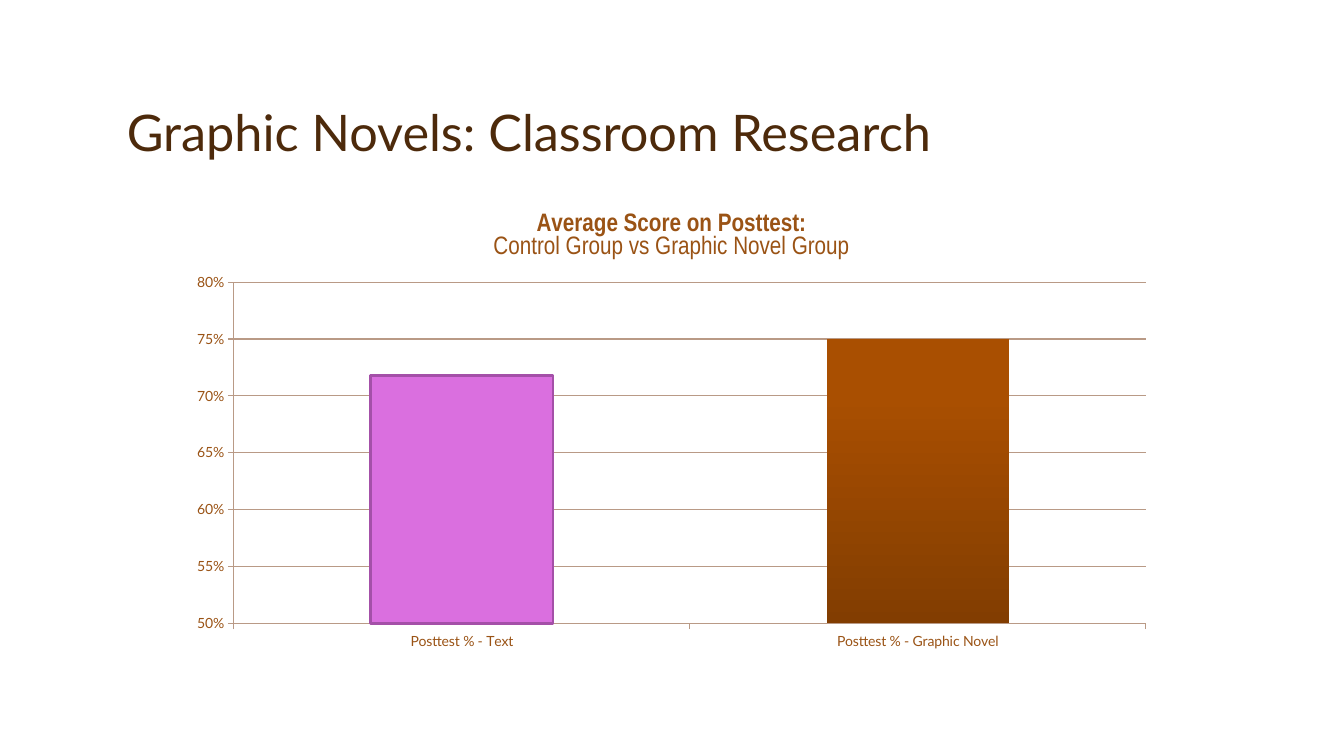
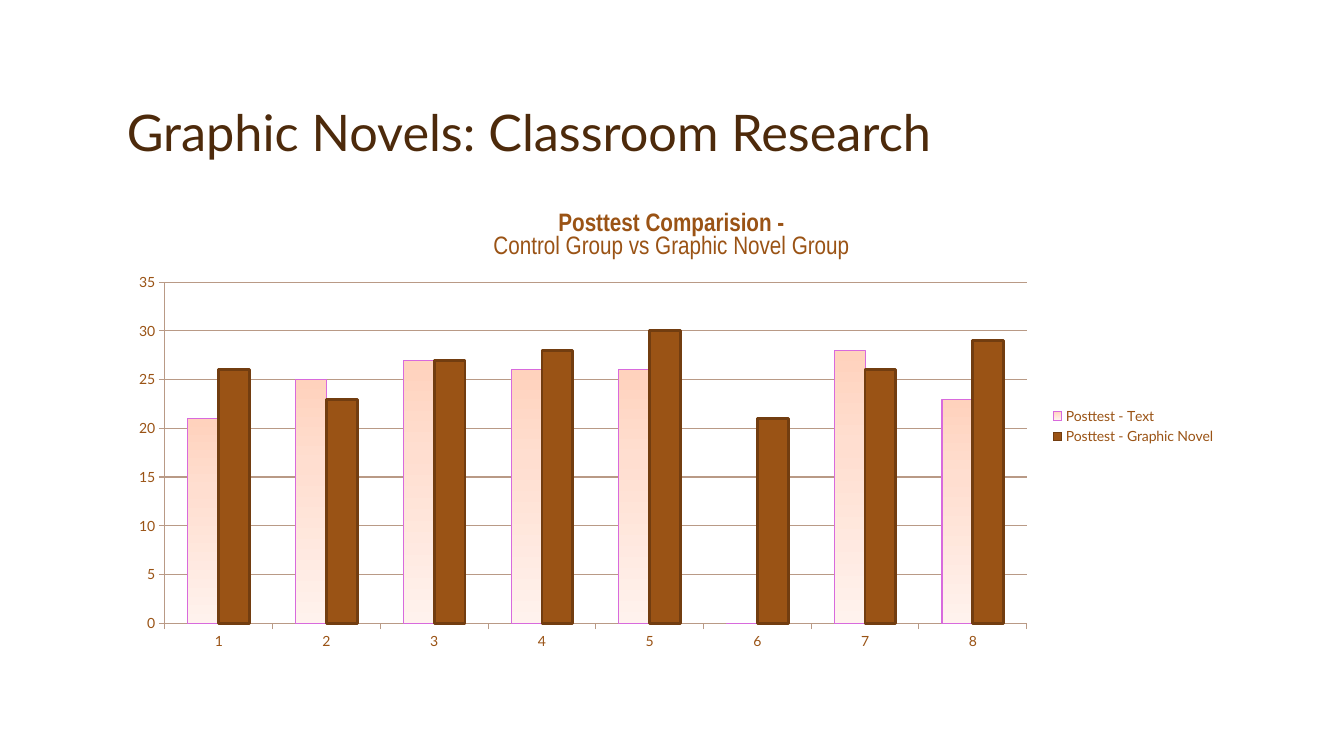
from pptx import Presentation
from pptx.chart.data import CategoryChartData
from pptx.dml.color import RGBColor
from pptx.enum.chart import XL_CHART_TYPE, XL_LEGEND_POSITION, XL_TICK_MARK
from pptx.enum.text import MSO_ANCHOR
from pptx.oxml import parse_xml
from pptx.oxml.ns import nsdecls
from pptx.util import Inches, Pt

COLUMN = XL_CHART_TYPE.COLUMN_CLUSTERED
LEGEND_RIGHT = XL_LEGEND_POSITION.RIGHT
TICK_OUT = XL_TICK_MARK.OUTSIDE
BOTTOM = MSO_ANCHOR.BOTTOM


class Theme:
    """Fonts, type sizes and colours."""
    body_font, chart_title_font = "Lato", "Arial Narrow"
    title_size, chart_title_size, chart_size = 36, 18, 10
    title, chart_text, grid = "4D2A0B", "9A5315", "B99A86"
    orchid, orchid_edge, pink_edge = "DA6FDF", "A450A8", "D86ADD"
    brown, brown_edge = "9A5315", "723D10"
    # Gradients: stops as (percent, colour), then counter-clockwise angle
    rust_gradient = [(0, "823D01"), (80, "A94F01"), (100, "AA4F00")], 90
    peach_gradient = [(0, "FFD2BD"), (35, "FFDED0"), (100, "FFF2ED")], 270


class Deck:
    def __init__(self, theme):
        self.theme = theme
        self.prs = Presentation()
        self.prs.slide_width, self.prs.slide_height = Inches(13.33), Inches(7.5)
        self.s = None

    def slide(self, title):
        self.s = self.prs.slides.add_slide(self.prs.slide_layouts[6])
        tf = self.s.shapes.add_textbox(
            Inches(1.16), Inches(0.33), Inches(11), Inches(1.33)).text_frame
        tf.word_wrap = True
        tf.vertical_anchor = BOTTOM
        p = tf.paragraphs[0]
        p.text = title
        p.line_spacing = 0.9
        self.font(p.runs[0].font, self.theme.title_size, self.theme.title)

    def font(self, font, size, color, name=None, bold=False):
        font.name = name or self.theme.body_font
        font.size = Pt(size)
        font.bold = bold
        font.color.rgb = RGBColor.from_string(color)

    def line(self, line, color, width=0.75):
        line.color.rgb = RGBColor.from_string(color)
        line.width = Pt(width)

    def paint(self, fmt, fill, edge=None):
        """Fill with a colour or a gradient; edge is (colour, width)."""
        if isinstance(fill, str):
            fmt.fill.solid()
            fmt.fill.fore_color.rgb = RGBColor.from_string(fill)
        else:
            stops, angle = fill
            fmt.fill.gradient()
            fmt.fill.gradient_angle = angle
            gs = "".join(
                f'<a:gs pos="{pos * 1000}"><a:srgbClr val="{color}"/></a:gs>'
                for pos, color in stops)
            old = fmt._element.xpath("c:spPr/a:gradFill/a:gsLst")[0]
            old.getparent().replace(
                old, parse_xml(f'<a:gsLst {nsdecls("a")}>{gs}</a:gsLst>'))
        if edge:
            self.line(fmt.line, *edge)
        else:
            fmt.line.fill.background()

    def column_chart(self, left, width, heading, cats, series, scale, number_format):
        t = self.theme
        data = CategoryChartData()
        data.categories = cats
        for name, values in series:
            data.add_series(name, values)
        chart = self.s.shapes.add_chart(
            COLUMN, Inches(left), Inches(1.92), Inches(width), Inches(4.62), data).chart
        self.font(chart.font, t.chart_size, t.chart_text)

        # Heading: bold first line, regular second line
        chart.has_title = True
        tf = chart.chart_title.text_frame
        tf.text = "\n".join(heading)
        for i, p in enumerate(tf.paragraphs):
            self.font(p.runs[0].font, t.chart_title_size, t.chart_text,
                      t.chart_title_font, bold=i == 0)
        chart.chart_title.include_in_layout = False

        # Legend only where there is something to tell apart
        chart.has_legend = len(series) > 1
        if chart.has_legend:
            chart.legend.position = LEGEND_RIGHT
            chart.legend.include_in_layout = False

        # Axes
        for axis in (chart.category_axis, chart.value_axis):
            axis.major_tick_mark = TICK_OUT
            self.line(axis.format.line, t.grid)
        axis = chart.value_axis
        axis.minimum_scale, axis.maximum_scale, axis.major_unit = scale
        axis.tick_labels.number_format = number_format
        axis.tick_labels.number_format_is_linked = False
        axis.has_major_gridlines = True
        self.line(axis.major_gridlines.format.line, t.grid)

        plot = chart.plots[0]
        plot.gap_width, plot.overlap = 150, 0
        plot.vary_by_categories = False
        return plot


def main():
    t = Theme()
    deck = Deck(t)
    title = "Graphic Novels: Classroom Research"
    groups = "Control Group vs Graphic Novel Group"

    # Average scores
    deck.slide(title)
    plot = deck.column_chart(
        1.76, 9.8, ["Average Score on Posttest:", groups],
        ["Posttest % - Text", "Posttest % - Graphic Novel"],
        [("Series 1", [0.718, 0.75])], (0.5, 0.8, 0.05), "0%")
    points = plot.series[0].points
    deck.paint(points[0].format, t.orchid, (t.orchid_edge, 2))
    deck.paint(points[1].format, t.rust_gradient)

    # Scores one by one
    deck.slide(title)
    plot = deck.column_chart(
        1.16, 11, ["Posttest Comparision -", groups],
        [str(n) for n in range(1, 9)],
        [("Posttest - Text", [21, 25, 27, 26, 26, 0, 28, 23]),
         ("Posttest - Graphic Novel", [26, 23, 27, 28, 30, 21, 26, 29])],
        (0, 35, 5), "General")
    text, novel = plot.series
    deck.paint(text.format, t.peach_gradient, (t.pink_edge, 0.75))
    deck.paint(novel.format, t.brown, (t.brown_edge, 2))

    deck.prs.save("out.pptx")


if __name__ == "__main__":
    main()
